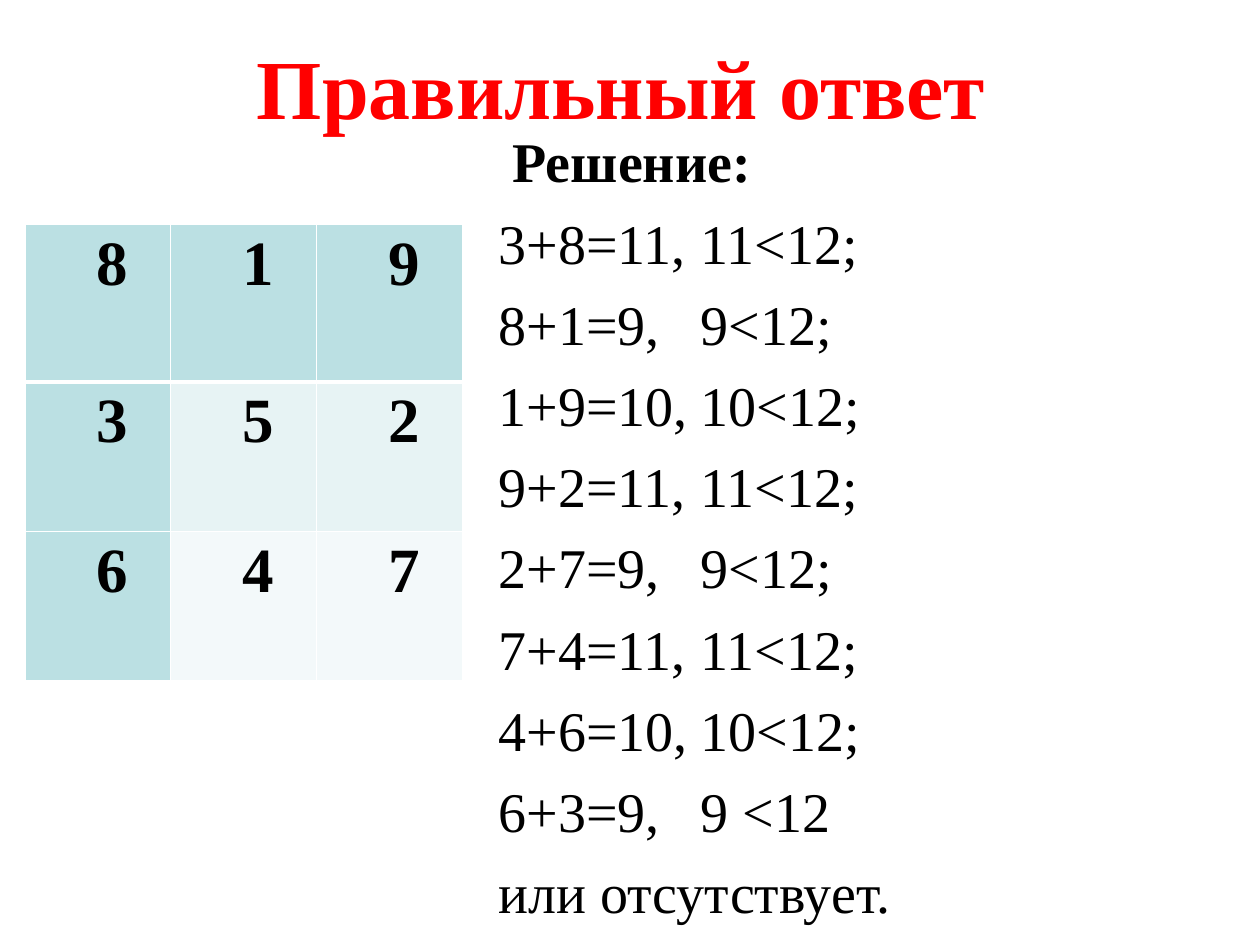
from dataclasses import dataclass

from lxml import etree
from pptx import Presentation
from pptx import util as u
from pptx.dml.color import RGBColor
from pptx.enum import text
from pptx.oxml import ns


@dataclass(frozen=True)
class Theme:
    """Colours, typeface and type sizes of the slide."""
    font: str = "Times New Roman"
    title: str = "FF0000"
    ink: str = "000000"
    border: str = "FFFFFF"
    header: str = "BBE0E3"
    bands: tuple = ("E7F3F4", "F3F9FA")
    title_size: int = 48
    body_size: int = 32
    cell_size: int = 36


THEME = Theme()
SQUARE = [[8, 1, 9], [3, 5, 2], [6, 4, 7]]
SOLUTION = [
    "3+8=11,\t11<12;",
    "8+1=9,\t9<12;",
    "1+9=10,\t10<12;",
    "9+2=11,\t11<12;",
    "2+7=9,\t9<12;",
    "7+4=11,\t11<12;",
    "4+6=10,\t10<12;",
    "6+3=9,\t9 <12",
    "или отсутствует.",
]


def style(paragraph, size, color, bold=False):
    """Set the font of a whole paragraph."""
    font = paragraph.font
    font.name = THEME.font
    font.size = u.Pt(size)
    font.bold = bold
    font.color.rgb = RGBColor.from_string(color)


def add_frame(slide, box):
    """Add a wrapping text box and return its text frame."""
    frame = slide.shapes.add_textbox(*map(u.Cm, box)).text_frame
    frame.word_wrap = True
    return frame


def add_title(slide, box):
    """Place the centred title."""
    frame = add_frame(slide, box)
    frame.vertical_anchor = text.MSO_ANCHOR.MIDDLE
    paragraph = frame.paragraphs[0]
    paragraph.text = "Правильный ответ"
    paragraph.alignment = text.PP_ALIGN.CENTER
    style(paragraph, THEME.title_size, THEME.title, bold=True)


def add_solution(slide, box):
    """Place the solution heading and its lines, aligned on one tab stop."""
    frame = add_frame(slide, box)
    frame.margin_top = u.Cm(0.23)
    heading = frame.paragraphs[0]
    heading.text = "Решение:"
    heading._p.get_or_add_pPr().set("marL", str(u.Cm(0.28)))
    style(heading, THEME.body_size, THEME.ink, bold=True)
    for line in SOLUTION:
        paragraph = frame.add_paragraph()
        paragraph.text = line
        properties = paragraph._p.get_or_add_pPr()
        tabs = etree.SubElement(properties, ns.qn("a:tabLst"))
        etree.SubElement(tabs, ns.qn("a:tab"), pos=str(u.Cm(4.08)), algn="l")
        paragraph.space_before = u.Pt(8)
        style(paragraph, THEME.body_size, THEME.ink)


def set_borders(cell, bottom):
    """Draw the cell borders, with the given width at the bottom."""
    properties = cell._tc.get_or_add_tcPr()
    widths = {"lnL": 1, "lnR": 1, "lnT": 1, "lnB": bottom}
    for index, (side, width) in enumerate(widths.items()):
        line = etree.Element(ns.qn(f"a:{side}"), w=str(u.Pt(width)))
        fill = etree.SubElement(line, ns.qn("a:solidFill"))
        etree.SubElement(fill, ns.qn("a:srgbClr"), val=THEME.border)
        properties.insert(index, line)


def add_square(slide, box):
    """Place the number square with a shaded first row and column."""
    left, top, width, height = box
    count = len(SQUARE)
    table = slide.shapes.add_table(count, count, *map(u.Cm, box)).table
    first_height = 3.18
    for index in range(count):
        table.columns[index].width = u.Cm(width / count)
        row_height = (height - first_height) / (count - 1) if index else first_height
        table.rows[index].height = u.Cm(row_height)
    for row, numbers in enumerate(SQUARE):
        for column, number in enumerate(numbers):
            cell = table.cell(row, column)
            cell.margin_left = cell.margin_right = u.Cm(0.18)
            cell.margin_top = cell.margin_bottom = 0
            shaded = row == 0 or column == 0
            color = THEME.header if shaded else THEME.bands[row - 1]
            cell.fill.solid()
            cell.fill.fore_color.rgb = RGBColor.from_string(color)
            set_borders(cell, bottom=1 if row else 3)
            paragraph = cell.text_frame.paragraphs[0]
            paragraph.text = str(number)
            paragraph._p.get_or_add_pPr().set("marL", str(u.Cm(1.27)))
            paragraph.line_spacing = 1.07
            style(paragraph, THEME.cell_size, THEME.ink, bold=True)


def main():
    """Build and save the answer slide."""
    presentation = Presentation()
    presentation.slide_width = u.Cm(25.4)
    presentation.slide_height = u.Cm(19.05)
    slide = presentation.slides.add_slide(presentation.slide_layouts[6])
    add_title(slide, (0.9, 0.75, 23.25, 1.95))
    add_solution(slide, (9.8, 2.33, 14.43, 13.62))
    add_square(slide, (0.5, 4.52, 8.82, 9.2))
    presentation.save("out.pptx")


if __name__ == "__main__":
    main()
